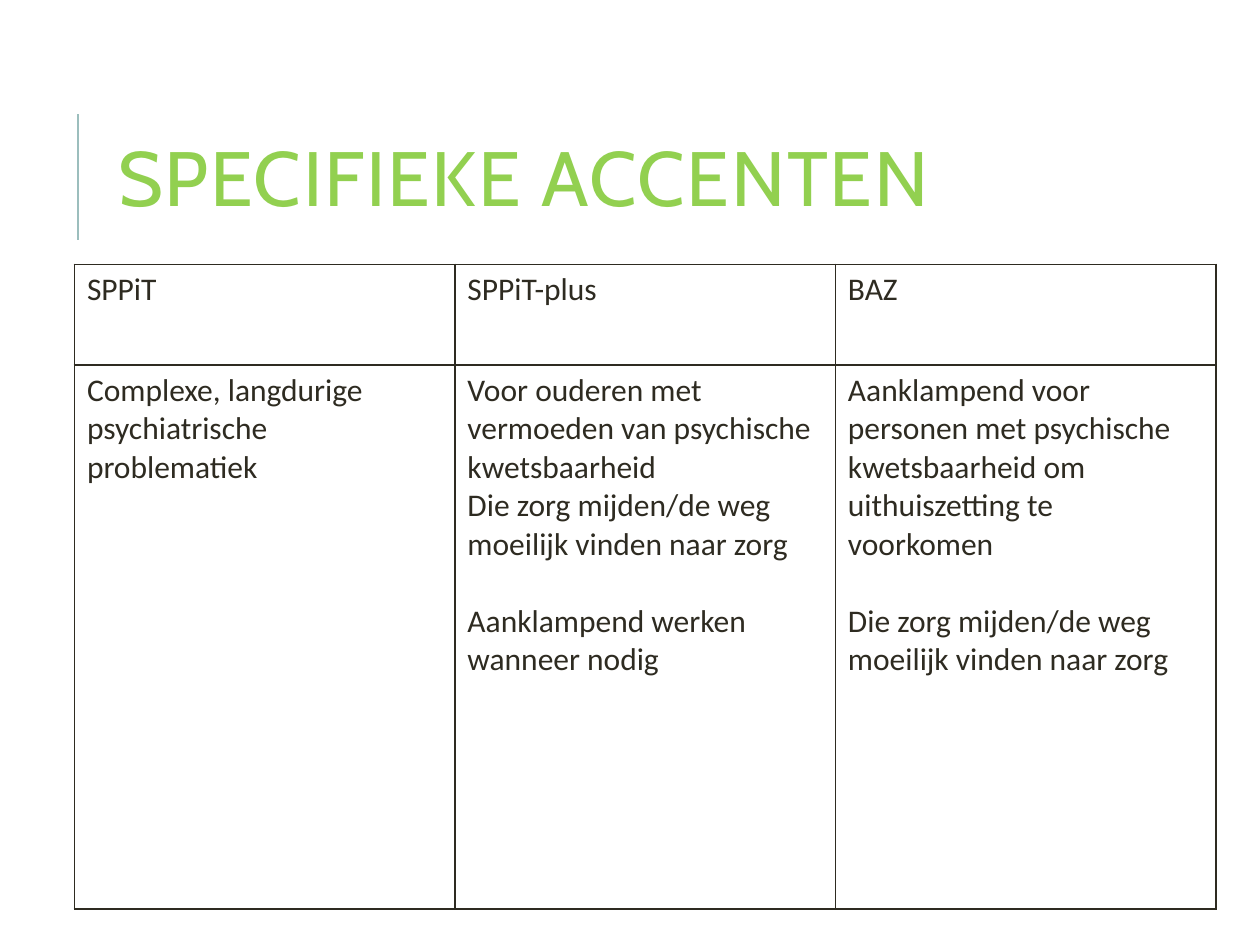
from collections import namedtuple
from dataclasses import dataclass

from lxml.etree import SubElement
from pptx import Presentation
from pptx.dml.color import RGBColor
from pptx.enum.shapes import MSO_CONNECTOR as Connector
from pptx.enum.text import MSO_ANCHOR as Anchor
from pptx.oxml.ns import qn
from pptx.util import Cm, Pt

Box = namedtuple("Box", "left top width height")


@dataclass(frozen=True)
class Theme:
    title_color: RGBColor = RGBColor(0x92, 0xD0, 0x50)
    accent: RGBColor = RGBColor(0x9C, 0xBE, 0xBD)
    ink: RGBColor = RGBColor(0x2E, 0x2B, 0x21)
    title_font: str = "Cabin"
    body_font: str = "Calibri"
    title_size: Pt = Pt(44)
    body_size: Pt = Pt(18)
    line_gap: Pt = Pt(22)
    rule: Pt = Pt(1.5)
    border: Pt = Pt(1)


THEME = Theme()

# Each cell lists its paragraphs as (text, starts a new block)
HEADINGS = ["SPPiT", "SPPiT-plus", "BAZ"]
AVOIDING_CARE = "Die zorg mijden/de weg moeilijk vinden naar zorg"
ACCENTS = [
    [("Complexe, langdurige psychiatrische problematiek", False)],
    [("Voor ouderen met vermoeden van psychische kwetsbaarheid", False),
     (AVOIDING_CARE, False),
     ("Aanklampend werken wanneer nodig", True)],
    [("Aanklampend voor personen met psychische kwetsbaarheid om "
      "uithuiszetting te voorkomen", False),
     (AVOIDING_CARE, True)],
]


def style_font(font, name, size, color):
    font.name, font.size = name, size
    font.color.rgb = color


def add_title(page, box, text):
    # Vertical accent rule, left of the title
    x, top = box.left - Cm(0.56), box.top + Cm(0.66)
    rule = page.shapes.add_connector(
        Connector.STRAIGHT, x, top + Cm(2.54), x, top)
    rule.line.color.rgb = THEME.accent
    rule.line.width = THEME.rule
    SubElement(rule._element.spPr, qn("a:effectLst"))

    # Title text with wide letter spacing
    frame = page.shapes.add_textbox(*box).text_frame
    frame.word_wrap = True
    frame.vertical_anchor = Anchor.MIDDLE
    para = frame.paragraphs[0]
    para.line_spacing = 0.8
    span = para.add_run()
    span.text = text
    style_font(span.font, THEME.title_font, THEME.title_size, THEME.title_color)
    span.font._element.set("spc", "100")


def add_borders(cell):
    props = cell._tc.get_or_add_tcPr()
    for index, side in enumerate(("a:lnL", "a:lnR", "a:lnT", "a:lnB")):
        line = SubElement(props, qn(side), w=str(int(THEME.border)))
        fill = SubElement(line, qn("a:solidFill"))
        SubElement(fill, qn("a:srgbClr"), val=str(THEME.ink))
        props.remove(line)
        props.insert(index, line)


def fill_cell(cell, paragraphs):
    cell.fill.background()
    add_borders(cell)
    frame = cell.text_frame
    for index, (text, new_block) in enumerate(paragraphs):
        para = frame.add_paragraph() if index else frame.paragraphs[0]
        para.text = text
        style_font(para.font, THEME.body_font, THEME.body_size, THEME.ink)
        para.font.bold = False
        if new_block:
            para.space_before = THEME.line_gap


def add_accent_table(page, box, header_height):
    rows = [[[(heading, False)] for heading in HEADINGS], ACCENTS]
    table = page.shapes.add_table(len(rows), len(HEADINGS), *box).table
    table.first_row = table.horz_banding = False
    for column in table.columns:
        column.width = int(box.width / len(HEADINGS))
    table.rows[0].height = header_height
    table.rows[1].height = box.height - header_height
    for row, contents in zip(table.rows, rows):
        for cell, paragraphs in zip(row.cells, contents):
            fill_cell(cell, paragraphs)


def main():
    deck = Presentation()
    deck.slide_width, deck.slide_height = Cm(25.4), Cm(19.05)
    page = deck.slides.add_slide(deck.slide_layouts[6])
    add_title(page, Box(Cm(2.13), Cm(1.63), Cm(20.24), Cm(4.17)),
              "SPECIFIEKE ACCENTEN")
    add_accent_table(page, Box(Cm(1.5), Cm(5.33), Cm(23.01), Cm(13)), Cm(2.03))
    deck.save("out.pptx")


if __name__ == "__main__":
    main()
